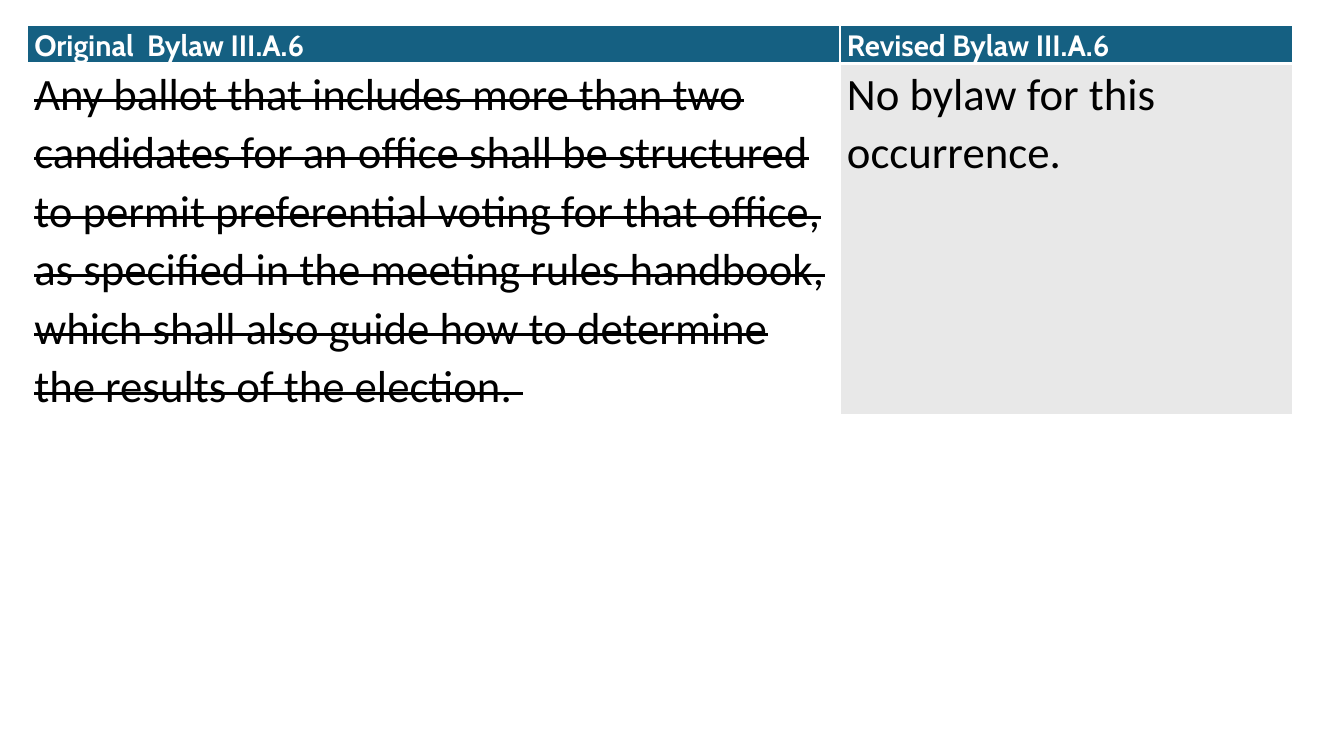
from lxml import etree
from pptx import Presentation, util as u
from pptx.dml.color import RGBColor
from pptx.oxml import ns

WHITE = RGBColor(0xFF, 0xFF, 0xFF)
BLACK = RGBColor(0x00, 0x00, 0x00)
TEAL = RGBColor(0x15, 0x60, 0x82)
GREY = RGBColor(0xE8, 0xE8, 0xE8)

HEADINGS = ("Original  Bylaw III.A.6", "Revised Bylaw III.A.6")
BYLAWS = (
    "Any ballot that includes more than two candidates for an office shall be "
    "structured to permit preferential voting for that office, as specified in "
    "the meeting rules handbook, which shall also guide how to determine the "
    "results of the election. ",
    "No bylaw for this occurrence.",
)


def set_borders(cell, top, bottom):
    """Draw white borders, one point wide at the sides."""
    properties = cell._tc.get_or_add_tcPr()
    for side, width in (("L", 1), ("R", 1), ("T", top), ("B", bottom)):
        border = etree.SubElement(properties, ns.qn(f"a:ln{side}"), w=str(u.Pt(width)))
        ink = etree.SubElement(border, ns.qn("a:solidFill"))
        etree.SubElement(ink, ns.qn("a:srgbClr"), val=str(WHITE))


def write_cell(cell, wording, font_name, size, color, fill=None, bold=False, struck=False):
    """Fill a cell with one formatted paragraph."""
    cell.margin_left = cell.margin_right = u.Pt(5)
    cell.margin_top = cell.margin_bottom = 0
    if fill is None:
        cell.fill.background()
    else:
        cell.fill.solid()
        cell.fill.fore_color.rgb = fill
    paragraph = cell.text_frame.paragraphs[0]
    paragraph.text = wording
    paragraph.line_spacing = 1.07
    run = paragraph.runs[0]
    run.font.name = font_name
    run.font.size = u.Pt(size)
    run.font.bold = bold
    run.font.color.rgb = color
    if struck:
        run._r.get_or_add_rPr().set("strike", "sngStrike")


def add_bylaw_comparison(slide, left, top, width, height):
    """Place the original and revised bylaw side by side."""
    header_height = 27
    original_width = 580.5
    comparison = slide.shapes.add_table(
        2, 2, u.Pt(left), u.Pt(top), u.Pt(width), u.Pt(height)
    ).table
    comparison.columns[0].width = u.Pt(original_width)
    comparison.columns[1].width = u.Pt(width - original_width)
    comparison.rows[0].height = u.Pt(header_height)
    comparison.rows[1].height = u.Pt(height - header_height)
    for column, (heading, bylaw) in enumerate(zip(HEADINGS, BYLAWS)):
        is_original = column == 0
        heading_cell = comparison.cell(0, column)
        bylaw_cell = comparison.cell(1, column)
        set_borders(heading_cell, top=1, bottom=3)
        set_borders(bylaw_cell, top=3, bottom=1)
        write_cell(heading_cell, heading, "Cabin", 21, WHITE, TEAL, bold=True)
        write_cell(bylaw_cell, bylaw, "Calibri", 32, BLACK,
                   None if is_original else GREY, struck=is_original)


def main():
    """Build the bylaw slide and save it."""
    deck = Presentation()
    deck.slide_width = u.Pt(960)
    deck.slide_height = u.Pt(540)
    slide = deck.slides.add_slide(deck.slide_layouts[6])
    add_bylaw_comparison(slide, left=19.5, top=18, width=903.5, height=271)
    deck.save("out.pptx")


if __name__ == "__main__":
    main()
